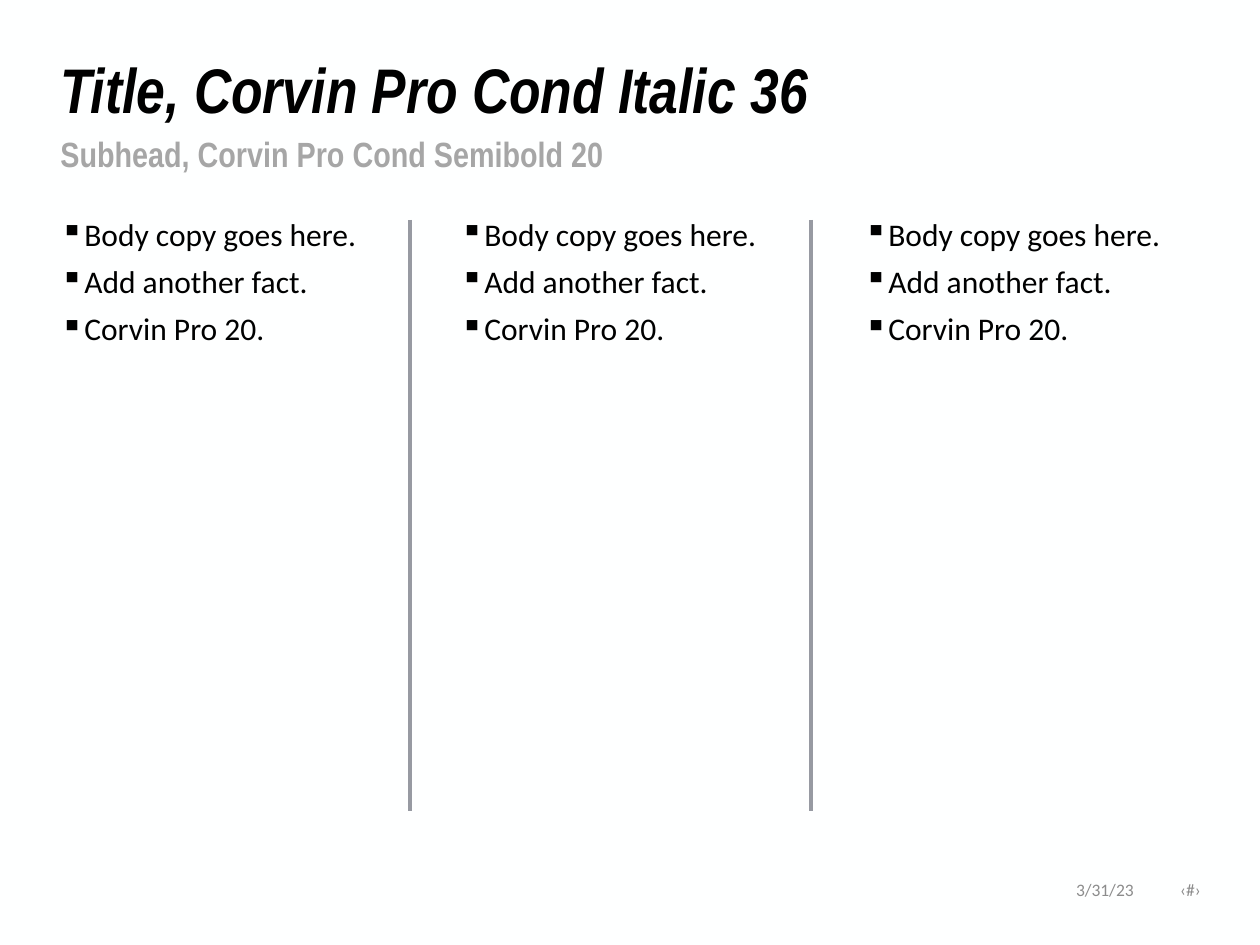
from lxml import etree
from pptx import Presentation, util as u
from pptx.dml.color import RGBColor
from pptx.enum import shapes, text
from pptx.oxml.ns import qn

PX = u.Inches(1) / 126


def px(length):
    return u.Emu(round(length * PX))


def add_text(page, frame, lines, size, color, font="Calibri", bold=False,
             italic=False, bullet=None, spacing=0.9,
             anchor=text.MSO_ANCHOR.TOP, align=text.PP_ALIGN.LEFT):
    box = page.shapes.add_textbox(*map(px, frame))
    box.text_frame.word_wrap = True
    box.text_frame.vertical_anchor = anchor
    for i, line in enumerate(lines):
        para = box.text_frame.paragraphs[0] if i == 0 else box.text_frame.add_paragraph()
        para.text = line
        para.alignment = align
        para.line_spacing = spacing
        if i:
            para.space_before = u.Pt(7.5)
        if bullet:
            props = para._p.get_or_add_pPr()
            props.set("marL", str(px(24)))
            props.set("indent", str(-px(24)))
            etree.SubElement(props, qn("a:buChar"), char=bullet)
        para.font.size = u.Pt(size)
        para.font.name = font
        para.font.bold = bold
        para.font.italic = italic
        para.font.color.rgb = RGBColor.from_string(color)


deck = Presentation()
deck.slide_width, deck.slide_height = px(1260), px(945)
page = deck.slides.add_slide(deck.slide_layouts[6])
page.background.fill.solid()
page.background.fill.fore_color.rgb = RGBColor.from_string("FEFFFF")

add_text(page, (48, 53, 1164, 81), ["Title, Corvin Pro Cond Italic 36"], 36, "000000",
         font="Arial Narrow", bold=True, italic=True, anchor=text.MSO_ANCHOR.MIDDLE)
add_text(page, (48, 131, 1165, 50), ["Subhead, Corvin Pro Cond Semibold 20"], 20, "A6A6A6",
         font="Arial Narrow", bold=True)

facts = ["Body copy goes here.", "Add another fact.", "Corvin Pro 20."]
for left in (48, 448, 852):
    add_text(page, (left, 213, 363, 605), facts, 18, "000000", bullet="▪")

for x in (410, 811):
    divider = page.shapes.add_connector(
        shapes.MSO_CONNECTOR.STRAIGHT, px(x), px(220), px(x), px(811))
    divider.line.color.rgb = RGBColor.from_string("979AA2")
    divider.line.width = u.Pt(2.25)
    etree.SubElement(divider._element.spPr, qn("a:effectLst"))

for left, width, label in ((1028, 118, "3/31/23"), (1146, 67, "‹#›")):
    add_text(page, (left, 867, width, 44), [label], 10, "8C8C8C", spacing=1.0,
             anchor=text.MSO_ANCHOR.MIDDLE, align=text.PP_ALIGN.RIGHT)

deck.save("out.pptx")
